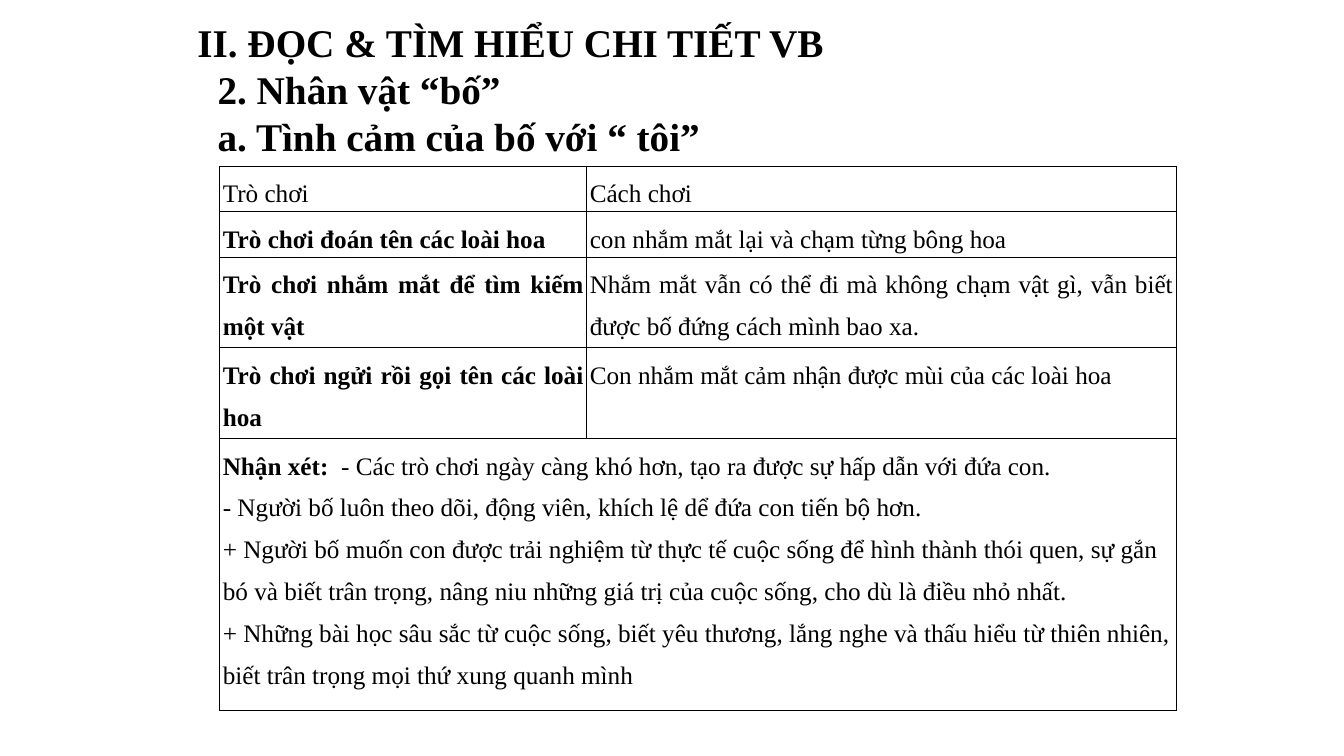
from lxml import etree
from pptx import Presentation
from pptx.dml.color import RGBColor
from pptx.enum.text import MSO_AUTO_SIZE, PP_ALIGN
from pptx.oxml.ns import qn
from pptx.util import Inches, Pt

JUSTIFY, LEFT = PP_ALIGN.JUSTIFY, PP_ALIGN.LEFT
FIT_SHAPE = MSO_AUTO_SIZE.SHAPE_TO_FIT_TEXT

FONT = "Times New Roman"
COLORS = {"text": "000000", "border": "000000"}
HEADING_SIZE, TABLE_SIZE = 28, 18

# (left, top, width, height), lines
HEADINGS = [
    ((1.86, 0.13, 6.46, 0.57), ["II. ĐỌC & TÌM HIỂU CHI TIẾT VB"]),
    ((2.06, 0.6, 6.06, 1.04), ["2. Nhân vật “bố”", "a. Tình cảm của bố với “ tôi”"]),
]

GAMES = [
    ("Trò chơi", "Cách chơi"),
    ("Trò chơi đoán tên các loài hoa", "con nhắm mắt lại và chạm từng bông hoa"),
    ("Trò chơi nhắm mắt để tìm kiếm một vật",
     "Nhắm mắt vẫn có thể đi mà không chạm vật gì, vẫn biết được bố đứng cách mình bao xa."),
    ("Trò chơi ngửi rồi gọi tên các loài hoa",
     "Con nhắm mắt cảm nhận được mùi của các loài hoa"),
]
# Each paragraph is a list of (text, bold) runs
REMARKS = [
    [("Nhận xét: ", True),
     (" - Các trò chơi ngày càng khó hơn, tạo ra được sự hấp dẫn với đứa con.", False)],
    [("- Người bố luôn theo dõi, động viên, khích lệ dể đứa con tiến bộ hơn.", False)],
    [("+ Người bố muốn con được trải nghiệm từ thực tế cuộc sống để hình thành thói quen, "
      "sự gắn bó và biết trân trọng, nâng niu những giá trị của cuộc sống, "
      "cho dù là điều nhỏ nhất.", False)],
    [("+ Những bài học sâu sắc từ cuộc sống, biết yêu thương, lắng nghe và thấu hiểu "
      "từ thiên nhiên, biết trân trọng mọi thứ xung quanh mình", False)],
]
TABLE_LEFT, TABLE_TOP = 2.18, 1.65
COLUMN_WIDTHS = [3.64, 5.85]
ROW_HEIGHTS = [0.45, 0.45, 0.9, 0.9, 2.7]
CELL_INSET = 0.03


def write(frame, paragraphs, size, align=LEFT, spacing=None):
    """Fill a text frame with paragraphs given as lists of (text, bold) runs."""
    for index, runs in enumerate(paragraphs):
        paragraph = frame.paragraphs[0] if index == 0 else frame.add_paragraph()
        paragraph.alignment = align
        paragraph.line_spacing = spacing
        for text, bold in runs:
            run = paragraph.add_run()
            run.text = text
            run.font.name = FONT
            run.font.size = Pt(size)
            run.font.bold = bold
            run.font.color.rgb = RGBColor.from_string(COLORS["text"])


def style_cell(cell):
    cell.margin_left = cell.margin_right = Inches(CELL_INSET)
    cell.margin_top = cell.margin_bottom = 0
    cell.fill.background()
    properties = cell._tc.get_or_add_tcPr()
    for position, side in enumerate(("a:lnL", "a:lnR", "a:lnT", "a:lnB")):
        line = etree.Element(qn(side), w=str(Pt(1)))
        fill = etree.SubElement(line, qn("a:solidFill"))
        etree.SubElement(fill, qn("a:srgbClr"), val=COLORS["border"])
        properties.insert(position, line)


def add_heading(slide, box, lines):
    frame = slide.shapes.add_textbox(*map(Inches, box)).text_frame
    frame.word_wrap = True
    frame.auto_size = FIT_SHAPE
    write(frame, [[(line, True)] for line in lines], HEADING_SIZE)


def add_games_table(slide):
    table = slide.shapes.add_table(
        len(ROW_HEIGHTS), len(COLUMN_WIDTHS), Inches(TABLE_LEFT), Inches(TABLE_TOP),
        Inches(sum(COLUMN_WIDTHS)), Inches(sum(ROW_HEIGHTS))).table
    table.first_row = table.horz_banding = False
    for column, width in zip(table.columns, COLUMN_WIDTHS):
        column.width = Inches(width)
    for row, height in zip(table.rows, ROW_HEIGHTS):
        row.height = Inches(height)
    for cell in table.iter_cells():
        style_cell(cell)

    for r, game in enumerate(GAMES):
        for c, text in enumerate(game):
            bold = r > 0 and c == 0
            write(table.cell(r, c).text_frame, [[(text, bold)]], TABLE_SIZE, JUSTIFY, 1.5)

    last = len(GAMES)
    remark_cell = table.cell(last, 0)
    remark_cell.merge(table.cell(last, 1))
    write(remark_cell.text_frame, REMARKS, TABLE_SIZE, LEFT, 1.5)


def main():
    prs = Presentation()
    prs.slide_width, prs.slide_height = Inches(13.33), Inches(7.5)
    slide = prs.slides.add_slide(prs.slide_layouts[6])
    for box, lines in HEADINGS:
        add_heading(slide, box, lines)
    add_games_table(slide)
    prs.save("out.pptx")


if __name__ == "__main__":
    main()
